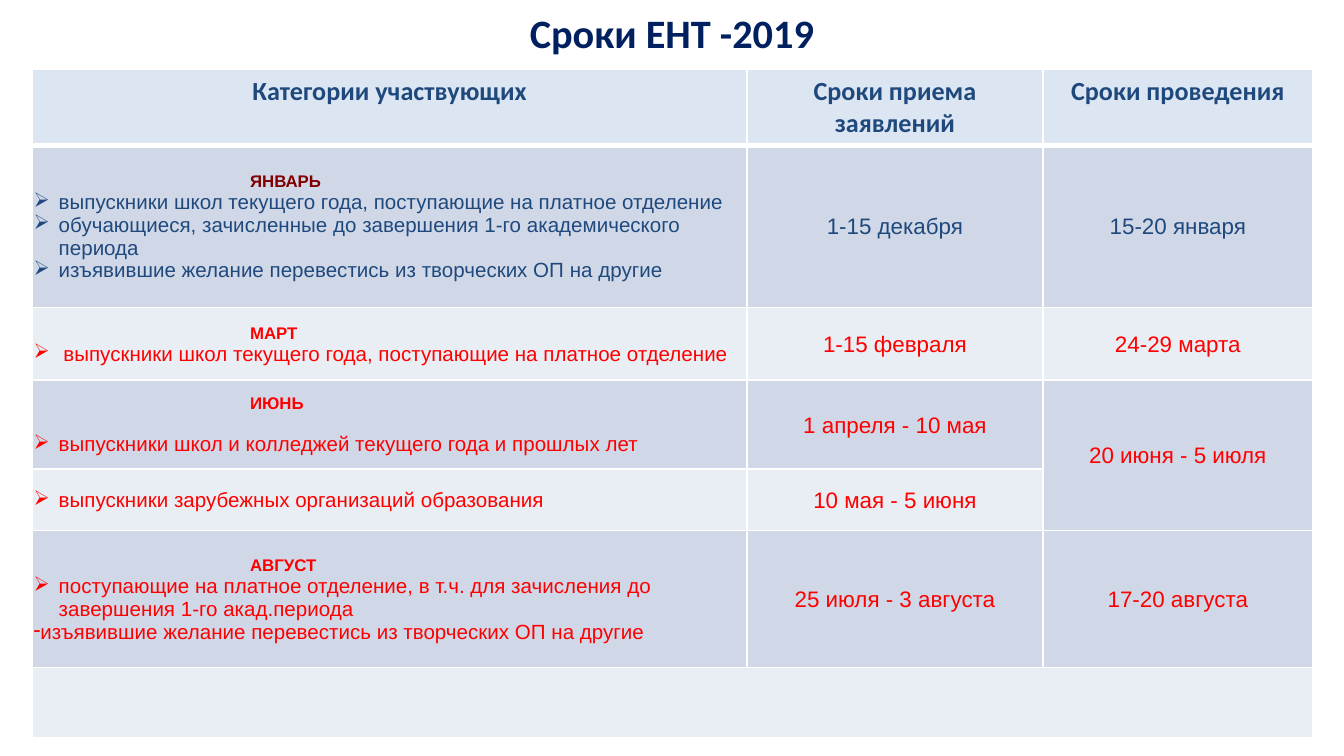
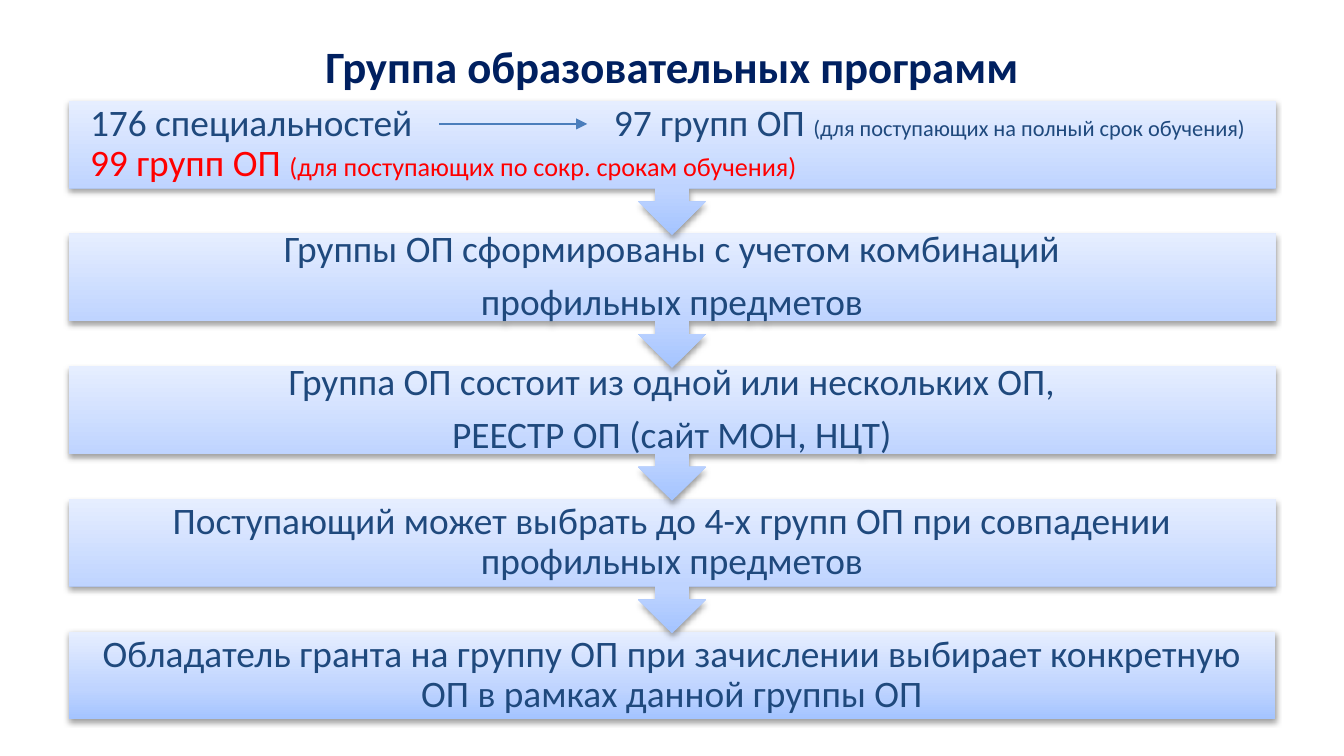
import dataclasses

import pptx
import pptx.dml.color
import pptx.enum.shapes
import pptx.enum.text
import pptx.oxml
import pptx.oxml.ns
import pptx.util

Pt = pptx.util.Pt
ALIGN = pptx.enum.text.PP_ALIGN
MIDDLE = pptx.enum.text.MSO_ANCHOR.MIDDLE
SHAPES = pptx.enum.shapes.MSO_SHAPE


@dataclasses.dataclass(frozen=True)
class Theme:
    """Colours, fonts and type sizes shared by the slides."""
    heading_font: str = "Calibri"
    body_font: str = "Arial"
    title: str = "002060"
    text: str = "1F497D"
    accent: str = "FF0000"
    january: str = "800000"
    white: str = "FFFFFF"
    header_fill: str = "DCE6F2"
    dark_band: str = "D0D8E8"
    light_band: str = "E9EDF4"
    arrow: str = "4B7EBC"
    gradient: tuple = ((0, "A4C4FF"), (35, "BFD4FF"), (100, "E6EEFF"))
    schedule_title_size: float = 21.6
    programs_title_size: float = 24
    header_size: float = 14
    month_size: float = 9
    category_size: float = 11
    date_size: float = 12
    step_size: float = 20
    small_note_size: float = 12
    note_size: float = 14


THEME = Theme()

COLUMN_WIDTHS = (383, 158.4, 144.7)
HEADERS = ("Категории участвующих", "Сроки приема заявлений", "Сроки проведения")
HEADER_HEIGHT = 39.6
PAID = "выпускники школ текущего года, поступающие на платное отделение"
TRANSFER = "изъявившие желание перевестись из творческих ОП на другие"


@dataclasses.dataclass(frozen=True)
class Period:
    """One row of the exam schedule."""
    height: float
    month: str = ""
    categories: tuple = ()
    application: str = ""
    exam: str = ""
    color: str = THEME.accent
    month_color: str = THEME.accent
    month_gap: float = 0
    text_indent: float = 13.5
    dashed: str = ""


PERIODS = (
    Period(87.1, "ЯНВАРЬ",
           (PAID, "обучающиеся, зачисленные до завершения 1-го академического периода", TRANSFER),
           "1-15 декабря", "15-20 января", THEME.text, THEME.january),
    Period(38.9, "МАРТ", (PAID,), "1-15 февраля", "24-29 марта", text_indent=16),
    Period(47.5, "ИЮНЬ", ("выпускники школ и колледжей текущего года и прошлых лет",),
           "1 апреля - 10 мая", "20 июня - 5 июля", month_gap=10.4),
    Period(33.1, "", ("выпускники зарубежных организаций образования",), "10 мая - 5 июня"),
    Period(73.4, "АВГУСТ",
           ("поступающие на платное отделение, в т.ч. для зачисления до завершения 1-го акад.периода",),
           "25 июля - 3 августа", "17-20 августа", dashed=TRANSFER),
    Period(37.4),
)
JUNE_ROW = 3

STEPS = (
    ("Группы ОП сформированы с учетом комбинаций", "профильных предметов"),
    ("Группа ОП состоит из одной или нескольких ОП,", "РЕЕСТР ОП (сайт МОН, НЦТ)"),
    ("Поступающий может выбрать до 4-х групп ОП при совпадении профильных предметов",),
    ("Обладатель гранта на группу ОП при зачислении выбирает конкретную ОП в рамках данной группы ОП",),
)
STEP_PITCH = 71.1
STEP_HEIGHT = 46.8
CALLOUT_HEIGHT = 72


def rgb(value):
    """Return a colour object for a hex string."""
    return pptx.dml.color.RGBColor.from_string(value)


def element(xml):
    """Parse a drawing element whose root tag lacks its namespace."""
    tag, rest = xml[1:].split(":", 1)
    name = rest.replace("/", " ").replace(">", " ").split()[0]
    opening = f"<{tag}:{name}"
    return pptx.oxml.parse_xml(
        xml.replace(opening, f"{opening} {pptx.oxml.ns.nsdecls('a')}", 1))


def add_run(paragraph, text, size, color, font=THEME.heading_font, bold=False):
    """Add one formatted run."""
    run = paragraph.add_run()
    run.text = text
    run.font.size = Pt(size)
    run.font.name = font
    run.font.bold = bold
    run.font.color.rgb = rgb(color)


def next_paragraph(frame):
    """Return the unused first paragraph or a new one."""
    first = frame.paragraphs[0]
    return frame.add_paragraph() if first.runs else first


def set_indent(paragraph, left, hanging=0, bullet=""):
    """Set the left margin, the hanging indent and the bullet."""
    properties = paragraph._p.get_or_add_pPr()
    properties.set("marL", str(Pt(left)))
    properties.set("indent", str(-Pt(hanging)))
    if bullet:
        properties.append(element(f'<a:buChar char="{bullet}"/>'))


def add_title(slide, text, size, box):
    """Add the centred slide title in its box."""
    shape = slide.shapes.add_textbox(*map(Pt, box))
    frame = shape.text_frame
    frame.word_wrap = True
    frame.vertical_anchor = MIDDLE
    paragraph = frame.paragraphs[0]
    paragraph.alignment = ALIGN.CENTER
    add_run(paragraph, text, size, THEME.title, bold=True)


def style_cell(cell, fill, bottom=1):
    """Set the fill and white borders of a cell."""
    cell.fill.solid()
    cell.fill.fore_color.rgb = rgb(fill)
    properties = cell._tc.get_or_add_tcPr()
    for index, (side, width) in enumerate(zip("LRTB", (1, 1, 1, bottom))):
        properties.insert(index, element(
            f'<a:ln{side} w="{Pt(width)}"><a:solidFill><a:srgbClr val="{THEME.white}"/>'
            f'</a:solidFill></a:ln{side}>'))


def tighten_cell(cell):
    """Use narrow margins and middle alignment."""
    cell.margin_left = cell.margin_right = cell.margin_top = Pt(0.7)
    cell.margin_bottom = Pt(0)
    cell.vertical_anchor = MIDDLE


def fill_categories(cell, period):
    """Write the month and the categories of one period."""
    frame = cell.text_frame
    if period.month:
        paragraph = next_paragraph(frame)
        set_indent(paragraph, 116)
        paragraph.space_after = Pt(period.month_gap)
        add_run(paragraph, period.month, THEME.month_size, period.month_color,
                THEME.body_font, True)
    items = [(text, period.text_indent, "➢") for text in period.categories]
    if period.dashed:
        items.append((period.dashed, 0, "-"))
    for text, left, bullet in items:
        paragraph = next_paragraph(frame)
        set_indent(paragraph, left, left or 13.5, bullet)
        add_run(paragraph, text, THEME.category_size, period.color, THEME.body_font)


def add_schedule(slide, box):
    """Add the exam schedule table in its box."""
    shape = slide.shapes.add_table(len(PERIODS) + 1, len(HEADERS), *map(Pt, box))
    table = shape.table
    table.first_row = table.horz_banding = False
    for column, width in zip(table.columns, COLUMN_WIDTHS):
        column.width = Pt(width)
    table.rows[0].height = Pt(HEADER_HEIGHT)
    for index, header in enumerate(HEADERS):
        cell = table.cell(0, index)
        style_cell(cell, THEME.header_fill, 3)
        paragraph = cell.text_frame.paragraphs[0]
        paragraph.alignment = ALIGN.CENTER
        add_run(paragraph, header, THEME.header_size, THEME.text, bold=True)
    for row, period in enumerate(PERIODS, 1):
        table.rows[row].height = Pt(period.height)
        for column in range(len(HEADERS)):
            cell = table.cell(row, column)
            style_cell(cell, THEME.dark_band if row % 2 else THEME.light_band)
            tighten_cell(cell)
        fill_categories(table.cell(row, 0), period)
        for column, date in enumerate((period.application, period.exam), 1):
            if date:
                paragraph = table.cell(row, column).text_frame.paragraphs[0]
                paragraph.alignment = ALIGN.CENTER
                add_run(paragraph, date, THEME.date_size, period.color, THEME.body_font)
    table.cell(JUNE_ROW, 2).merge(table.cell(JUNE_ROW + 1, 2))
    last = len(PERIODS)
    table.cell(last, 0).merge(table.cell(last, 2))


def add_step_box(slide, kind, box):
    """Add a shaded step shape and return its text frame."""
    shape = slide.shapes.add_shape(kind, *map(Pt, box))
    shape.line.fill.background()
    shape.shadow.inherit = False
    stops = "".join(f'<a:gs pos="{position * 1000}"><a:srgbClr val="{color}"/></a:gs>'
                    for position, color in THEME.gradient)
    properties = shape._element.spPr
    properties.insert(2, element(
        f'<a:gradFill rotWithShape="1"><a:gsLst>{stops}</a:gsLst>'
        '<a:lin ang="16200000" scaled="0"/></a:gradFill>'))
    properties.find(pptx.oxml.ns.qn("a:effectLst")).append(element(
        f'<a:outerShdw blurRad="{Pt(3.1)}" dist="{Pt(1.6)}" dir="5400000" rotWithShape="0">'
        '<a:srgbClr val="000000"><a:alpha val="38000"/></a:srgbClr></a:outerShdw>'))
    frame = shape.text_frame
    frame.word_wrap = True
    frame.vertical_anchor = MIDDLE
    frame.margin_left = frame.margin_right = Pt(11.5)
    frame.margin_top = frame.margin_bottom = Pt(0)
    return frame


def add_step_paragraph(frame, alignment):
    """Add a paragraph with the spacing of the steps."""
    paragraph = next_paragraph(frame)
    paragraph.alignment = alignment
    paragraph.line_spacing = 0.9
    paragraph.space_after = Pt(7)
    return paragraph


def fill_counts(frame):
    """Write the numbers of specialities and program groups."""
    paragraph = add_step_paragraph(frame, ALIGN.LEFT)
    paragraph._p.get_or_add_pPr().append(element(
        f'<a:tabLst><a:tab pos="{Pt(280.7)}" algn="l"/></a:tabLst>'))
    add_run(paragraph, "176 специальностей\t97 групп ОП ", THEME.step_size, THEME.text)
    add_run(paragraph, "(для поступающих на полный срок обучения)",
            THEME.small_note_size, THEME.text)
    paragraph.add_line_break()
    add_run(paragraph, "99 групп ОП ", THEME.step_size, THEME.accent)
    add_run(paragraph, "(для поступающих по сокр. срокам обучения)",
            THEME.note_size, THEME.accent)


def add_count_arrow(slide, left, top, width):
    """Add the arrow between the two numbers."""
    line = slide.shapes.add_connector(
        pptx.enum.shapes.MSO_CONNECTOR.STRAIGHT, *map(Pt, (left, top, left + width, top)))
    line.line.color.rgb = rgb(THEME.arrow)
    line.line.width = Pt(0.75)
    line.line._get_or_add_ln().append(element('<a:tailEnd type="triangle"/>'))
    line._element.spPr.append(element("<a:effectLst/>"))


def add_steps(slide, left, top, width):
    """Add the chain of steps, the last one at the back."""
    last = len(STEPS)
    for index in range(last, -1, -1):
        kind, height = ((SHAPES.RECTANGLE, STEP_HEIGHT) if index == last
                        else (SHAPES.DOWN_ARROW_CALLOUT, CALLOUT_HEIGHT))
        frame = add_step_box(slide, kind, (left, top + index * STEP_PITCH, width, height))
        if index == 0:
            fill_counts(frame)
            continue
        for text in STEPS[index - 1]:
            add_run(add_step_paragraph(frame, ALIGN.CENTER), text, THEME.step_size, THEME.text)
    add_count_arrow(slide, left + 198.7, top + 12.4, 79.2)


def build_schedule_slide(slide):
    """Build the slide with the exam dates."""
    add_title(slide, "Сроки ЕНТ -2019", THEME.schedule_title_size, (36, 7.2, 648, 20.2))
    add_schedule(slide, (17.3, 36.9, sum(COLUMN_WIDTHS), 357))


def build_programs_slide(slide):
    """Build the slide with the program groups."""
    add_title(slide, "Группа образовательных программ", THEME.programs_title_size,
              (36, 7.2, 648, 55.4))
    add_steps(slide, 36.7, 54, 646.6)


def main():
    """Create and save the presentation."""
    presentation = pptx.Presentation()
    presentation.slide_width = Pt(720)
    presentation.slide_height = Pt(405)
    for build in (build_schedule_slide, build_programs_slide):
        build(presentation.slides.add_slide(presentation.slide_layouts[6]))
    presentation.save("out.pptx")


if __name__ == "__main__":
    main()
